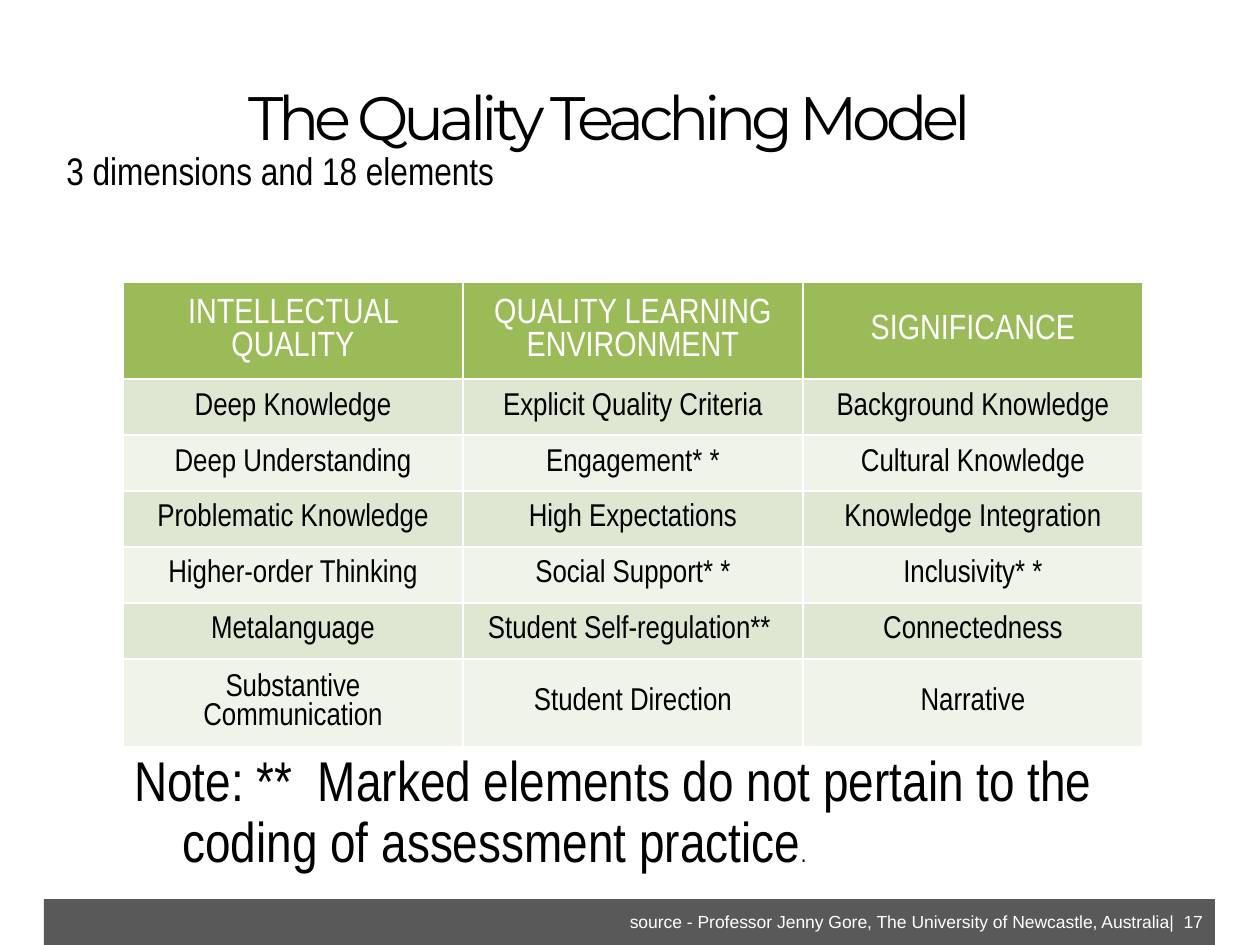
from pptx import Presentation
from pptx.dml.color import RGBColor
from pptx.enum.shapes import MSO_SHAPE
from pptx.enum.text import MSO_ANCHOR, MSO_AUTO_SIZE, PP_ALIGN
from pptx.oxml import parse_xml
from pptx.oxml.ns import nsdecls
from pptx.util import Pt

COLORS = {
    "black": "000000", "white": "FFFFFF", "bar": "595959",
    "header": "9BBB59", "band_dark": "DEE7D1", "band_light": "EFF3EA",
}
ROWS = [
    ("INTELLECTUAL QUALITY", "QUALITY LEARNING ENVIRONMENT", "SIGNIFICANCE"),
    ("Deep Knowledge", "Explicit Quality Criteria", "Background Knowledge"),
    ("Deep Understanding", "Engagement* *", "Cultural Knowledge"),
    ("Problematic Knowledge", "High Expectations", "Knowledge Integration"),
    ("Higher-order Thinking", "Social Support* *", "Inclusivity* *"),
    ("Metalanguage", "Student Self-regulation** ", "Connectedness"),
    ("Substantive Communication", "Student Direction", "Narrative"),
]
ROW_HEIGHTS = [97] + [56] * 5 + [88]
COL_WIDTH = 340


def px(*lengths):
    return [round(n * 914400 / 126) for n in lengths]


def format_text(p, size, font, color, align, spacing, hanging=0):
    if hanging:
        indent = px(hanging)[0]
        pPr = p._p.get_or_add_pPr()
        pPr.set("marL", str(indent))
        pPr.set("indent", str(-indent))
    p.alignment = align
    p.line_spacing = spacing
    p.font.size = Pt(size)
    p.font.name = font
    p.font.color.rgb = RGBColor.from_string(COLORS[color])


prs = Presentation()
prs.slide_width, prs.slide_height = px(1260, 945)
s = prs.slides.add_slide(prs.slide_layouts[5])

title = s.shapes.title
title.left, title.top, title.width, title.height = px(44, 81, 1131, 89)
tf = title.text_frame
tf.text = "The Quality Teaching Model"
tf.vertical_anchor = MSO_ANCHOR.TOP
tf.auto_size = MSO_AUTO_SIZE.NONE
format_text(tf.paragraphs[0], 35, "Montserrat", "black", PP_ALIGN.CENTER, 0.9, 48)
tf.paragraphs[0].runs[0].font._element.set("spc", "-300")

bar = s.shapes.add_shape(MSO_SHAPE.RECTANGLE, *px(44, 899, 1171, 46))
bar.shadow.inherit = False
bar.fill.solid()
bar.fill.fore_color.rgb = RGBColor.from_string(COLORS["bar"])
bar.line.fill.background()

table = s.shapes.add_table(
    len(ROWS), len(ROWS[0]), *px(123, 282, COL_WIDTH * 3, sum(ROW_HEIGHTS))
).table
for col in table.columns:
    col.width = px(COL_WIDTH)[0]
for i, (texts, height) in enumerate(zip(ROWS, ROW_HEIGHTS)):
    table.rows[i].height = px(height)[0]
    fill = "header" if i == 0 else "band_dark" if i % 2 else "band_light"
    for j, text in enumerate(texts):
        cell = table.cell(i, j)
        cell.text = text
        cell.vertical_anchor = MSO_ANCHOR.MIDDLE
        tcPr = cell._tc.get_or_add_tcPr()
        for side in ("lnL", "lnR", "lnT", "lnB"):
            tcPr.append(parse_xml(
                f'<a:{side} {nsdecls("a")} w="{Pt(1)}"><a:solidFill>'
                f'<a:srgbClr val="{COLORS["white"]}"/></a:solidFill></a:{side}>'
            ))
        cell.fill.solid()
        cell.fill.fore_color.rgb = RGBColor.from_string(COLORS[fill])
        size, color = (20, "white") if i == 0 else (18, "black")
        format_text(cell.text_frame.paragraphs[0], size, "Arial Narrow", color,
                    PP_ALIGN.CENTER, 1.0)

TEXT_BOXES = [
    ((54, 146, 1123, 89), "3 dimensions and 18 elements",
     (22, "Arial Narrow", "black", PP_ALIGN.LEFT, 0.9, 48)),
    ((122, 747, 1094, 89),
     "Note: **  Marked elements do not pertain to the coding of assessment practice",
     (32, "Arial Narrow", "black", PP_ALIGN.LEFT, 0.9, 48)),
    ((525, 905, 690, 34),
     "source - Professor Jenny Gore, The University of Newcastle, Australia|  17",
     (10, "Arial", "white", PP_ALIGN.RIGHT, 1.0)),
]
for box, text, style in TEXT_BOXES:
    tf = s.shapes.add_textbox(*px(*box)).text_frame
    tf.word_wrap = True
    p = tf.paragraphs[0]
    p.add_run().text = text
    format_text(p, *style)
    if text.startswith("Note"):
        r = p.add_run()
        r.text = "."
        r.font.size = Pt(14)

prs.save("out.pptx")
